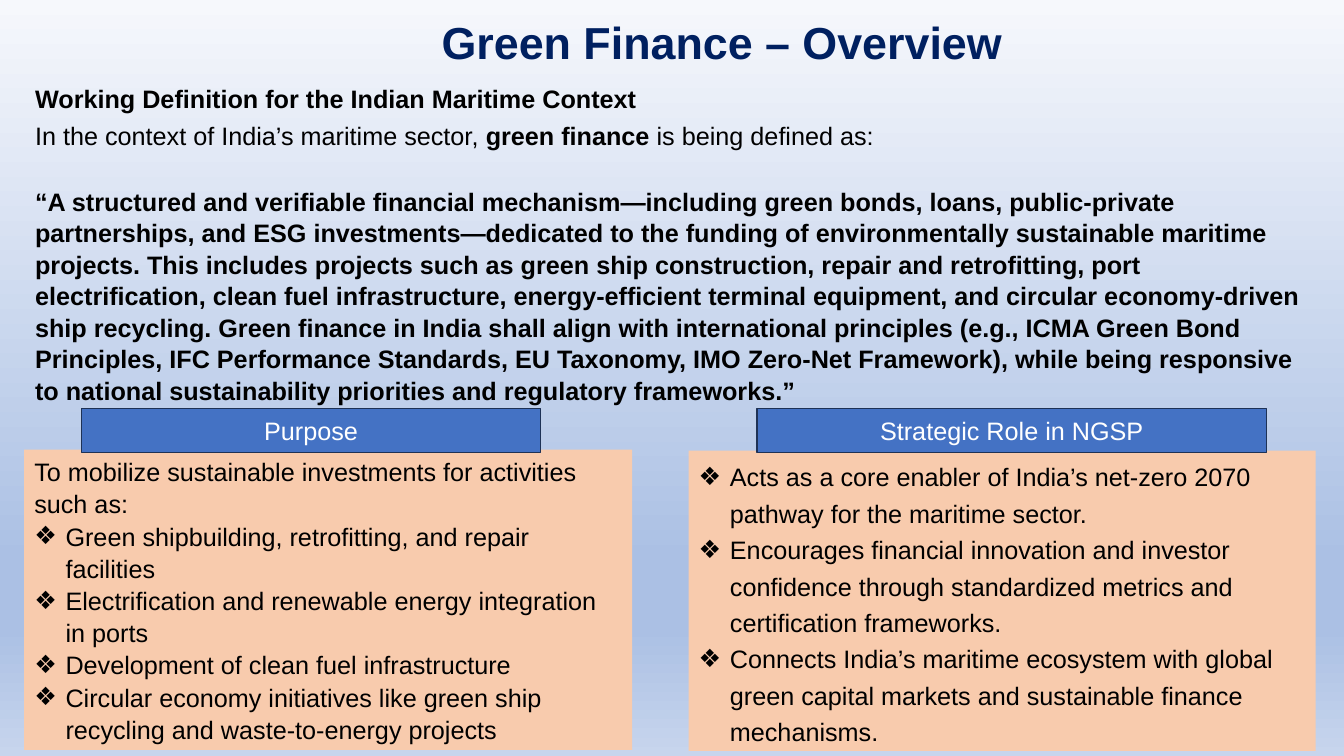
"""Build the green finance overview slide."""
from dataclasses import dataclass

from lxml.etree import SubElement
from pptx import Presentation
from pptx.dml.color import RGBColor
from pptx.enum.dml import MSO_THEME_COLOR
from pptx.enum.shapes import MSO_SHAPE
from pptx.enum.text import MSO_ANCHOR, MSO_AUTO_SIZE, PP_ALIGN
from pptx.oxml.ns import qn
from pptx.shapes.base import BaseShape
from pptx.slide import Slide
from pptx.text.text import TextFrame, _Paragraph as Paragraph
from pptx.util import Emu, Pt

PX = 9144
FONT = "Arial"
BULLET = "❖"
BULLET_INDENT = 31
NAVY = RGBColor(0x00, 0x20, 0x60)
BLACK = RGBColor(0x00, 0x00, 0x00)
WHITE = RGBColor(0xFF, 0xFF, 0xFF)
PEACH = RGBColor(0xF8, 0xCB, 0xAD)
BLUE = RGBColor(0x44, 0x72, 0xC4)
OUTLINE = RGBColor(0x1E, 0x32, 0x56)
BACKGROUND_STOPS = (
    (0, RGBColor(0xF6, 0xF8, 0xFC)),
    (74, RGBColor(0xAB, 0xC0, 0xE4)),
    (83, RGBColor(0xAB, 0xC0, 0xE4)),
    (100, RGBColor(0xC7, 0xD5, 0xED)),
)


@dataclass(frozen=True)
class Box:
    left: int
    top: int
    width: int
    height: int


@dataclass(frozen=True)
class Panel:
    heading: str
    heading_box: Box
    body_box: Box
    line_points: int
    bullets: tuple[str, ...]
    intro: str = ""


@dataclass(frozen=True)
class DefinitionParagraph:
    runs: tuple[tuple[str, bool], ...]
    line_spacing: float
    alignment: PP_ALIGN = PP_ALIGN.LEFT
    space_before: int = 0


TITLE_BOX = Box(428, 10, 696, 64)
DEFINITION_BOX = Box(25, 72, 1280, 327)
DEFINITION = (
    DefinitionParagraph(
        (("Working Definition for the Indian Maritime Context", True),), 1.2, PP_ALIGN.JUSTIFY
    ),
    DefinitionParagraph(
        (
            ("In the context of India’s maritime sector, ", False),
            ("green finance ", True),
            ("is being defined as:", False),
        ),
        1.2,
        PP_ALIGN.JUSTIFY,
    ),
    DefinitionParagraph(
        ((
            "“A structured and verifiable financial mechanism—including green bonds, loans, "
            "public-private partnerships, and ESG investments—dedicated to the funding of "
            "environmentally sustainable maritime projects. This includes projects such as "
            "green ship construction, repair and retrofitting, port electrification, clean "
            "fuel infrastructure, energy-efficient terminal equipment, and circular "
            "economy-driven ship recycling. Green finance in India shall align with "
            "international principles (e.g., ICMA Green Bond Principles, IFC Performance "
            "Standards, EU Taxonomy, IMO Zero-Net Framework), while being responsive to "
            "national sustainability priorities and regulatory frameworks.”",
            True,
        ),),
        1.04,
        space_before=25,
    ),
)
PANELS = (
    Panel(
        "Purpose",
        Box(81, 405, 455, 44),
        Box(24, 446, 603, 298),
        23,
        (
            "Green shipbuilding, retrofitting, and repair facilities",
            "Electrification and renewable energy integration in ports",
            "Development of clean fuel infrastructure",
            "Circular economy initiatives like green ship recycling and "
            "waste-to-energy projects",
        ),
        "To mobilize sustainable investments for activities such as:",
    ),
    Panel(
        "Strategic Role in NGSP",
        Box(751, 405, 505, 44),
        Box(683, 447, 622, 298),
        26,
        (
            "Acts as a core enabler of India’s net-zero 2070 pathway for the maritime sector.",
            "Encourages financial innovation and investor confidence through standardized "
            "metrics and certification frameworks.",
            "Connects India’s maritime ecosystem with global green capital markets and "
            "sustainable finance mechanisms.",
        ),
    ),
)


def emu(box: Box) -> tuple[Emu, Emu, Emu, Emu]:
    return Emu(box.left * PX), Emu(box.top * PX), Emu(box.width * PX), Emu(box.height * PX)


def place(shape: BaseShape, box: Box) -> None:
    shape.left, shape.top, shape.width, shape.height = emu(box)


def prepare_frame(frame: TextFrame, anchor: MSO_ANCHOR) -> None:
    frame.word_wrap = True
    frame.auto_size = MSO_AUTO_SIZE.NONE
    frame.vertical_anchor = anchor


def format_runs(paragraph: Paragraph, size: int, color: RGBColor, bold: bool = False) -> None:
    for run in paragraph.runs:
        run.font.name = FONT
        run.font.size = Pt(size)
        run.font.bold = bold
        run.font.color.rgb = color


def set_bullet(paragraph: Paragraph, bulleted: bool) -> None:
    properties = paragraph._p.get_or_add_pPr()
    indent = BULLET_INDENT * PX if bulleted else 0
    properties.set("marL", str(indent))
    properties.set("indent", str(-indent))
    if bulleted:
        SubElement(properties, qn("a:buFont"), typeface=FONT)
        SubElement(properties, qn("a:buChar"), char=BULLET)
    else:
        SubElement(properties, qn("a:buNone"))


def paint_background(slide: Slide) -> None:
    fill = slide.background.fill
    fill.gradient()
    fill.gradient_angle = 270
    stop_list = next(slide.element.iter(qn("a:gsLst")))
    for stop in list(stop_list):
        stop_list.remove(stop)
    for position, color in BACKGROUND_STOPS:
        stop = SubElement(stop_list, qn("a:gs"), pos=str(position * 1000))
        SubElement(stop, qn("a:srgbClr"), val=str(color))


def fill_title(slide: Slide) -> None:
    title = slide.shapes.title
    place(title, TITLE_BOX)
    title.text_frame.text = "Green Finance – Overview"
    prepare_frame(title.text_frame, MSO_ANCHOR.TOP)
    paragraph = title.text_frame.paragraphs[0]
    paragraph.alignment = PP_ALIGN.LEFT
    format_runs(paragraph, 32, NAVY, True)


def add_definition(slide: Slide) -> None:
    frame = slide.shapes.add_textbox(*emu(DEFINITION_BOX)).text_frame
    prepare_frame(frame, MSO_ANCHOR.TOP)
    for index, entry in enumerate(DEFINITION):
        paragraph = frame.add_paragraph() if index else frame.paragraphs[0]
        paragraph.alignment = entry.alignment
        paragraph.line_spacing = entry.line_spacing
        paragraph.space_before = Pt(entry.space_before)
        for text, _ in entry.runs:
            paragraph.add_run().text = text
        format_runs(paragraph, 18, BLACK)
        for run, (_, bold) in zip(paragraph.runs, entry.runs):
            run.font.bold = bold


def fill_panel(body: BaseShape, panel: Panel) -> None:
    place(body, panel.body_box)
    body.fill.solid()
    body.fill.fore_color.rgb = PEACH
    frame = body.text_frame
    intro = (panel.intro,) if panel.intro else ()
    frame.text = "\n".join(intro + panel.bullets)
    prepare_frame(frame, MSO_ANCHOR.TOP)
    for index, paragraph in enumerate(frame.paragraphs):
        set_bullet(paragraph, index >= len(intro))
        paragraph.line_spacing = Pt(panel.line_points)
        paragraph.space_before = Pt(0)
        format_runs(paragraph, 18, BLACK)


def add_heading(slide: Slide, panel: Panel) -> None:
    heading = slide.shapes.add_shape(MSO_SHAPE.RECTANGLE, *emu(panel.heading_box))
    heading.shadow.inherit = False
    heading.fill.solid()
    heading.fill.fore_color.rgb = BLUE
    heading.line.color.rgb = OUTLINE
    heading.line.width = Pt(1)
    heading.text_frame.text = panel.heading
    prepare_frame(heading.text_frame, MSO_ANCHOR.MIDDLE)
    paragraph = heading.text_frame.paragraphs[0]
    paragraph.alignment = PP_ALIGN.CENTER
    format_runs(paragraph, 18, WHITE)


def main() -> None:
    presentation = Presentation()
    presentation.slide_width, presentation.slide_height = Emu(1333 * PX), Emu(750 * PX)
    slide = presentation.slides.add_slide(presentation.slide_layouts[3])
    paint_background(slide)
    fill_title(slide)
    add_definition(slide)
    bodies = list(slide.placeholders)[1:]
    for body, panel in zip(bodies, PANELS):
        fill_panel(body, panel)
        add_heading(slide, panel)
    presentation.save("out.pptx")


if __name__ == "__main__":
    main()
